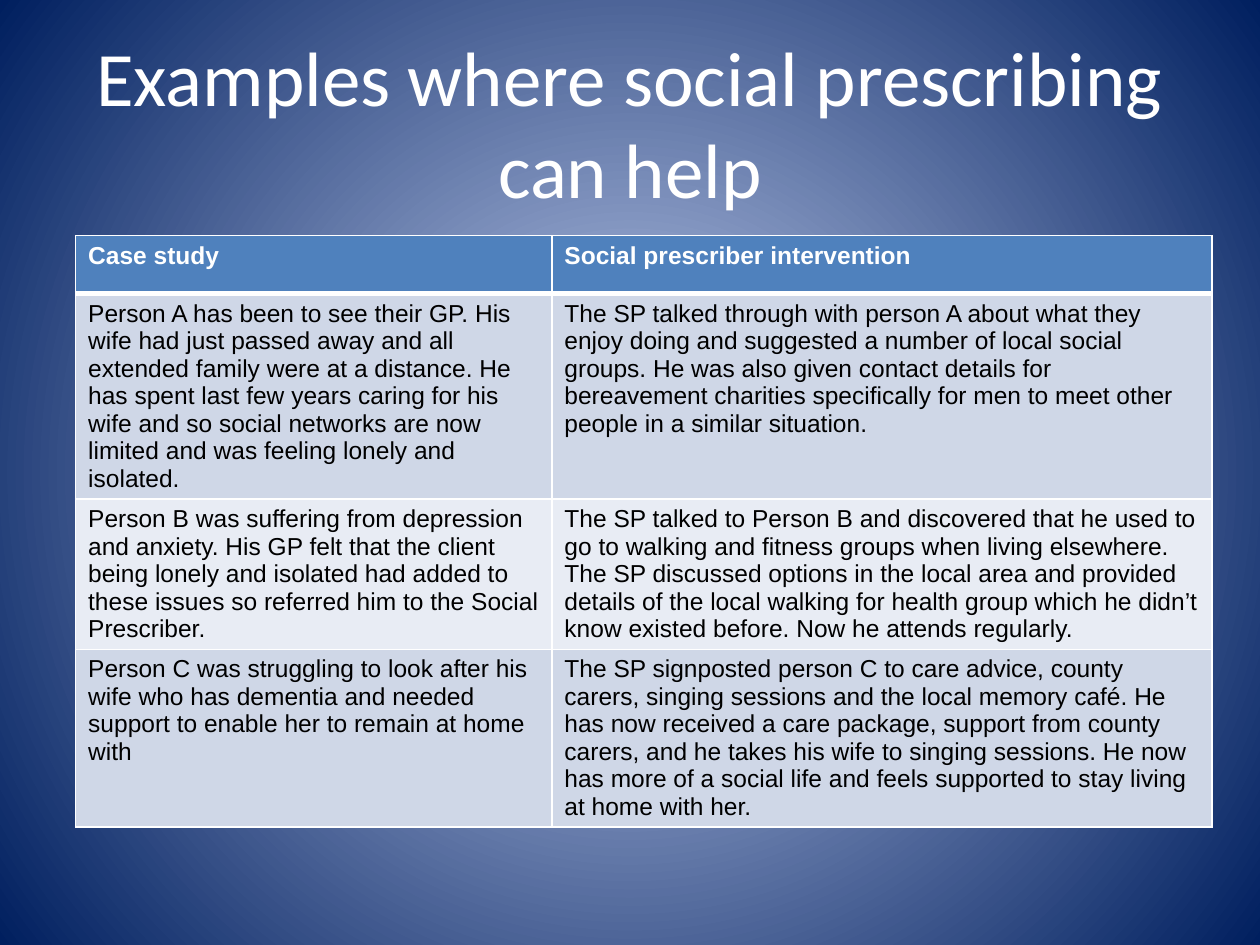
from dataclasses import dataclass

from lxml.etree import SubElement
from pptx import Presentation
from pptx.dml.color import RGBColor
from pptx.enum.text import MSO_ANCHOR, MSO_AUTO_SIZE, PP_ALIGN
from pptx.oxml import parse_xml
from pptx.oxml.ns import nsdecls, qn
from pptx.util import Inches, Pt


@dataclass(frozen=True)
class Theme:
    glow: tuple = ((0, "BDC7E3"), (8, "B0BEE1"), (100, "001F5F"))
    white: str = "FFFFFF"
    text: str = "000000"
    header: str = "4F81BD"
    bands: tuple = ("CFD7E7", "E8ECF4")
    title_font: str = "Calibri"
    body_font: str = "Arial"
    title_size: int = 44
    body_size: int = 14
    rule: int = 1
    header_rule: int = 3


THEME = Theme()
TITLE = "Examples where social prescribing can help"
COL_WIDTHS = (3.78, 5.24)
ROW_HEIGHTS = (0.46, 1.63, 1.19, 1.41)
CASES = (
    ("Case study", "Social prescriber intervention"),
    ("Person A has been to see their GP. His wife had just passed away and all "
     "extended family were at a distance. He has spent last few years caring for "
     "his wife and so social networks are now limited and was feeling lonely and "
     "isolated.",
     "The SP talked through with person A about what they enjoy doing and suggested "
     "a number of local social groups. He was also given contact details for "
     "bereavement charities specifically for men to meet other people in a similar "
     "situation."),
    ("Person B was suffering from depression and anxiety. His GP felt that the "
     "client being lonely and isolated had added to these issues so referred him to "
     "the Social Prescriber.",
     "The SP talked to Person B and discovered that he used to go to walking and "
     "fitness groups when living elsewhere. The SP discussed options in the local "
     "area and provided details of the local walking for health group which he "
     "didn’t know existed before. Now he attends regularly."),
    ("Person C was struggling to look after his wife who has dementia and needed "
     "support to enable her to remain at home with",
     "The SP signposted person C to care advice, county carers, singing sessions and "
     "the local memory café. He has now received a care package, support from county "
     "carers, and he takes his wife to singing sessions. He now has more of a social "
     "life and feels supported to stay living at home with her."),
)


def format_font(font, color, **values):
    for name, value in values.items():
        setattr(font, name, value)
    font.color.rgb = RGBColor.from_string(color)


def paint_background(s):
    """Fill the slide with a glow that spreads from its centre."""
    s.background.fill.solid()
    stops = "".join(
        f'<a:gs pos="{pos * 1000}"><a:srgbClr val="{color}"/></a:gs>'
        for pos, color in THEME.glow)
    gradient = parse_xml(
        f'<a:gradFill {nsdecls("a")} rotWithShape="1"><a:gsLst>{stops}</a:gsLst>'
        '<a:path path="circle"><a:fillToRect l="50000" t="50000" r="50000" b="50000"/>'
        '</a:path></a:gradFill>')
    solid = next(s.element.iter(qn("a:solidFill")))
    solid.getparent().replace(solid, gradient)


def place_title(s, left, top, width, height):
    sp = s.shapes.title
    box = {"left": left, "top": top, "width": width, "height": height}
    for name, value in box.items():
        setattr(sp, name, value)
    tf = sp.text_frame
    frame = {"word_wrap": True, "auto_size": MSO_AUTO_SIZE.NONE,
             "vertical_anchor": MSO_ANCHOR.MIDDLE}
    frame |= {f"margin_{side}": Inches(0.1)
              for side in ("left", "top", "right", "bottom")}
    for name, value in frame.items():
        setattr(tf, name, value)
    p = tf.paragraphs[0]
    p.alignment = PP_ALIGN.CENTER
    r = p.add_run()
    r.text = TITLE
    format_font(r.font, THEME.white, name=THEME.title_font, size=Pt(THEME.title_size))


def draw_borders(cell, **widths):
    tc_pr = cell._tc.get_or_add_tcPr()
    for side in "LRTB":
        width = widths.get(side, THEME.rule)
        line = SubElement(tc_pr, qn(f"a:ln{side}"), w=str(Pt(width)))
        fill = SubElement(line, qn("a:solidFill"))
        SubElement(fill, qn("a:srgbClr"), val=THEME.white)


def fill_cell(cell, text, row):
    is_header = row == 0
    draw_borders(cell,
                 T=THEME.header_rule if row == 1 else THEME.rule,
                 B=THEME.header_rule if is_header else THEME.rule)
    cell.fill.solid()
    color = THEME.header if is_header else THEME.bands[(row - 1) % 2]
    cell.fill.fore_color.rgb = RGBColor.from_string(color)
    r = cell.text_frame.paragraphs[0].add_run()
    r.text = text
    format_font(r.font, THEME.white if is_header else THEME.text,
                name=THEME.body_font, size=Pt(THEME.body_size), bold=is_header)


def place_case_table(s, left, top, width, height):
    table = s.shapes.add_table(len(CASES), len(COL_WIDTHS),
                               left, top, width, height).table
    for column, share in zip(table.columns, COL_WIDTHS):
        column.width = int(width * share / sum(COL_WIDTHS))
    for row, share in zip(table.rows, ROW_HEIGHTS):
        row.height = int(height * share / sum(ROW_HEIGHTS))
    for i, texts in enumerate(CASES):
        for j, text in enumerate(texts):
            fill_cell(table.cell(i, j), text, i)


def main():
    prs = Presentation()
    prs.slide_width, prs.slide_height = Inches(10), Inches(7.5)
    s = prs.slides.add_slide(prs.slide_layouts.get_by_name("Title Only"))
    paint_background(s)
    place_title(s, Inches(0.5), Inches(0.34), Inches(9), Inches(1.25))
    place_case_table(s, Inches(0.6), Inches(1.87),
                     Inches(sum(COL_WIDTHS)), Inches(sum(ROW_HEIGHTS)))
    prs.save("out.pptx")


if __name__ == "__main__":
    main()
